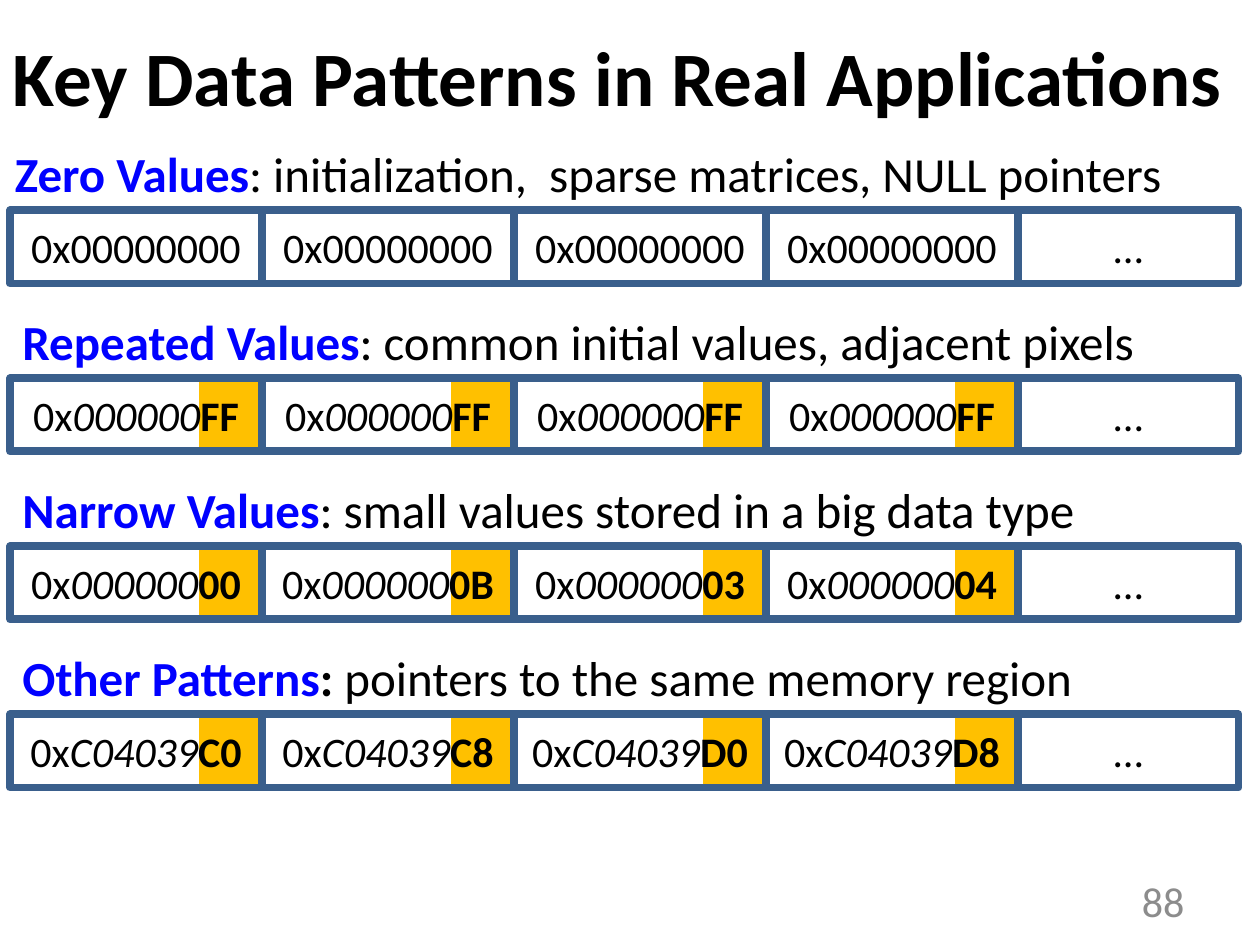
"""Build a slide of key data patterns, each shown as a row of memory words."""
from lxml import etree
from pptx import Presentation
from pptx import util as u
from pptx.dml.color import RGBColor
from pptx.enum import shapes, text
from pptx.oxml.ns import qn

TITLE = "Key Data Patterns in Real Applications"
PAGE_NUMBER = "88"
PATTERNS = [
    {"name": "Zero Values", "colon_bold": False, "left": 0.02,
     "detail": "initialization,  sparse matrices, NULL pointers",
     "prefix": "00000000", "endings": [""] * 4},
    {"name": "Repeated Values", "colon_bold": False, "left": 0.08,
     "detail": "common initial values, adjacent pixels",
     "prefix": "000000", "endings": ["FF"] * 4},
    {"name": "Narrow Values", "colon_bold": False, "left": 0.08,
     "detail": "small values stored in a big data type",
     "prefix": "000000", "endings": ["00", "0B", "03", "04"]},
    {"name": "Other Patterns", "colon_bold": True, "left": 0.08,
     "detail": "pointers to the same memory region",
     "prefix": "C04039", "endings": ["C0", "C8", "D0", "D8"]},
]
FONT = "Calibri"
BLACK, BLUE, GRAY, AMBER, BORDER = "000000", "0000FF", "8C8C8C", "FFC000", "3A5F8C"
WIDTH, HEIGHT = 10, 7.5
GRID_LEFT, GRID_TOP, ROW_STEP = 0.08, 1.67, 4 / 3
WORD_WIDTH, REST_WIDTH, WORD_HEIGHT, BYTE_WIDTH = 2, 1.75, 0.58, 0.5
HEADING_RISE = 0.58


def color(value):
    return RGBColor.from_string(value)


def box(left, top, width, height):
    return [u.Inches(length) for length in (left, top, width, height)]


def write(shape, runs, size, align=text.PP_ALIGN.LEFT, anchor=text.MSO_ANCHOR.MIDDLE):
    frame = shape.text_frame
    frame.word_wrap = True
    frame.auto_size = text.MSO_AUTO_SIZE.NONE
    frame.vertical_anchor = anchor
    paragraph = frame.paragraphs[0]
    paragraph.alignment = align
    paragraph.font.name = FONT
    paragraph.font.size = u.Pt(size)
    for words, bold, italic, shade in runs:
        run = paragraph.add_run()
        run.text = words
        run.font.name, run.font.size = FONT, u.Pt(size)
        run.font.bold, run.font.italic = bold, italic
        run.font.color.rgb = color(shade)
    return paragraph


def add_rectangle(slide, area, fill=None, line=None):
    shape = slide.shapes.add_shape(shapes.MSO_SHAPE.RECTANGLE, *area)
    shape.shadow.inherit = False
    if fill:
        shape.fill.solid()
        shape.fill.fore_color.rgb = color(fill)
    else:
        shape.fill.background()
    if line:
        shape.line.color.rgb = color(line)
        shape.line.width = u.Pt(4.5)
    else:
        shape.line.fill.background()
    return shape


def add_word(slide, left, top, width, runs):
    cell = add_rectangle(slide, box(left, top, width, WORD_HEIGHT), line=BORDER)
    write(cell, runs, 24, text.PP_ALIGN.CENTER)


def add_row(slide, pattern, top):
    for column, ending in enumerate(pattern["endings"]):
        left = GRID_LEFT + column * WORD_WIDTH
        runs = [("0x" + pattern["prefix"], False, False, BLACK)]
        if ending:
            byte_left = left + WORD_WIDTH - BYTE_WIDTH
            add_rectangle(slide, box(byte_left, top, BYTE_WIDTH, WORD_HEIGHT), AMBER)
            runs = [("0x", False, False, BLACK),
                    (pattern["prefix"], False, True, BLACK),
                    (ending, True, False, BLACK)]
        add_word(slide, left, top, WORD_WIDTH, runs)
    rest_left = GRID_LEFT + len(pattern["endings"]) * WORD_WIDTH
    add_word(slide, rest_left, top, REST_WIDTH, [("…", False, False, BLACK)])


def add_heading(slide, pattern, top):
    heading = slide.shapes.add_textbox(*box(pattern["left"], top, 9.5, 0.75))
    runs = [(pattern["name"], True, False, BLUE),
            (": ", pattern["colon_bold"], False, BLACK),
            (pattern["detail"], False, False, BLACK)]
    paragraph = write(heading, runs, 28, anchor=text.MSO_ANCHOR.TOP)
    paragraph.space_before = u.Pt(0)
    spacing = paragraph._p.pPr.find(qn("a:spcBef"))
    spacing.clear()
    etree.SubElement(spacing, qn("a:spcPct"), val="20000")


def main():
    presentation = Presentation()
    presentation.slide_width, presentation.slide_height = u.Inches(WIDTH), u.Inches(HEIGHT)
    slide = presentation.slides.add_slide(presentation.slide_layouts[5])
    title = slide.shapes.title
    title.left, title.top, title.width, title.height = box(0, 0.03, WIDTH, 1.14)
    write(title, [(TITLE, True, False, BLACK)], 44)
    for row, pattern in enumerate(PATTERNS):
        top = GRID_TOP + row * ROW_STEP
        add_row(slide, pattern, top)
        add_heading(slide, pattern, top - HEADING_RISE)
    number = slide.shapes.add_textbox(*box(7.17, 6.95, 2.33, 0.4))
    write(number, [(PAGE_NUMBER, False, False, GRAY)], 24, text.PP_ALIGN.RIGHT)
    presentation.save("out.pptx")


if __name__ == "__main__":
    main()
